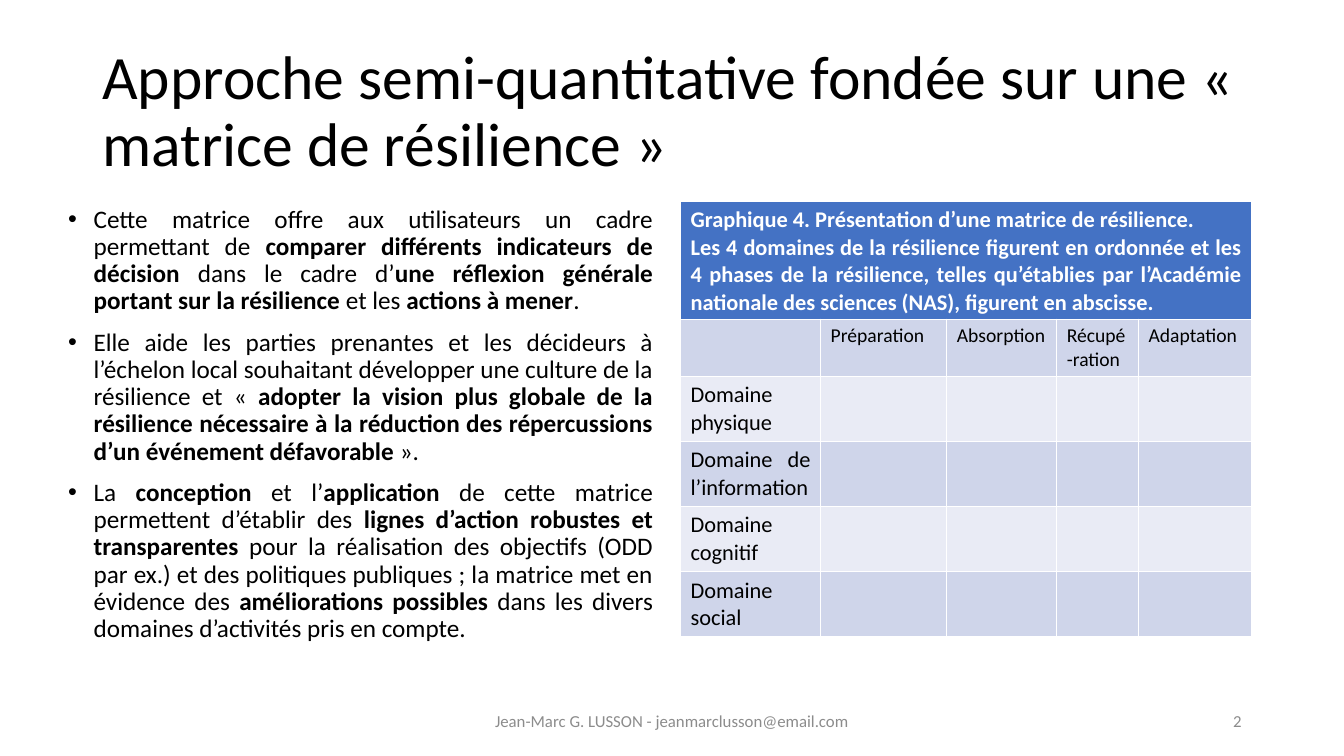
from lxml import etree
from pptx import Presentation
from pptx.dml.color import RGBColor
from pptx.enum.text import MSO_ANCHOR, PP_ALIGN
from pptx.oxml.ns import qn
from pptx.util import Cm, Pt

LEFT, RIGHT = PP_ALIGN.LEFT, PP_ALIGN.RIGHT
CENTER, JUSTIFY = PP_ALIGN.CENTER, PP_ALIGN.JUSTIFY
TOP, MIDDLE = MSO_ANCHOR.TOP, MSO_ANCHOR.MIDDLE

BLACK = RGBColor(0x00, 0x00, 0x00)
WHITE = RGBColor(0xFF, 0xFF, 0xFF)
GREY = RGBColor(0x8C, 0x8C, 0x8C)
BLUE = RGBColor(0x44, 0x72, 0xC4)
BANDS = (RGBColor(0xCF, 0xD5, 0xEA), RGBColor(0xE9, 0xEB, 0xF5))

TITLE = "Approche semi-quantitative fondée sur une « matrice de résilience »"
# Asterisks enclose bold passages.
POINTS = [
    "Cette matrice offre aux utilisateurs un cadre permettant de *comparer "
    "différents indicateurs de décision* dans le cadre d’*une réflexion "
    "générale portant sur la résilience* et les *actions à mener*.",
    "Elle aide les parties prenantes et les décideurs à l’échelon local "
    "souhaitant développer une culture de la résilience et « *adopter la "
    "vision plus globale de la résilience nécessaire à la réduction des "
    "répercussions d’un événement défavorable *». ",
    "La *conception* et l’*application* de cette matrice permettent d’établir "
    "des *lignes d’action robustes et transparentes* pour la réalisation des "
    "objectifs (ODD par ex.) et des politiques publiques ; la matrice met en "
    "évidence des *améliorations possibles* dans les divers domaines "
    "d’activités pris en compte.",
]
CAPTION = (
    "Graphique 4. Présentation d’une matrice de résilience. \n"
    "Les 4 domaines de la résilience figurent en ordonnée et les 4 phases de "
    "la résilience, telles qu’établies par l’Académie nationale des sciences "
    "(NAS), figurent en abscisse."
)
PHASES = ["Préparation", "Absorption", "Récupé-ration", "Adaptation"]
FIELDS = ["Domaine physique", "Domaine de l’information",
          "Domaine cognitif", "Domaine social"]
WIDTHS = [3.53, 3.18, 2.77, 2.06, 2.86]
HEIGHTS = [2.95, 1.42] + [1.64] * len(FIELDS)


class Deck:
    font = "Calibri"

    def __init__(self):
        self.prs = Presentation()
        self.prs.slide_width, self.prs.slide_height = Cm(33.87), Cm(19.05)
        self.slide = self.prs.slides.add_slide(self.prs.slide_layouts[6])

    def style(self, frame, size, color, align, bold=False):
        """Format every paragraph and run of a text frame."""
        for para in frame.paragraphs:
            para.alignment = align
            for run in para.runs:
                run.font.name = self.font
                run.font.size = Pt(size)
                run.font.color.rgb = color
                run.font.bold = bold

    def frame(self, box, anchor):
        """Add an empty wrapped text box and return its text frame."""
        shape = self.slide.shapes.add_textbox(*map(Cm, box))
        shape.text_frame.word_wrap = True
        shape.text_frame.vertical_anchor = anchor
        return shape.text_frame

    def text(self, box, words, size, color, align, spacing=1.0):
        frame = self.frame(box, MIDDLE)
        frame.text = words
        frame.paragraphs[0].line_spacing = spacing
        self.style(frame, size, color, align)

    def bullets(self, box, points, size):
        frame = self.frame(box, TOP)
        frame.text = "\n".join(p.replace("*", "") for p in points)
        for para, point in zip(frame.paragraphs, points):
            para.clear()
            for part in point.split("*"):
                para.add_run().text = part
            para.line_spacing = 0.9
            para.space_before = Pt(10)
            props = para._p.get_or_add_pPr()
            props.set("marL", str(Cm(0.64)))
            props.set("indent", str(-Cm(0.64)))
            etree.SubElement(props, qn("a:buFont")).set("typeface", "Arial")
            etree.SubElement(props, qn("a:buChar")).set("char", "•")
        self.style(frame, size, BLACK, JUSTIFY)
        for para in frame.paragraphs:
            for run in para.runs[1::2]:
                run.font.bold = True

    def cell(self, cell, words, size, fill, color=BLACK, bold=False):
        cell.fill.solid()
        cell.fill.fore_color.rgb = fill
        cell.text = words
        self.style(cell.text_frame, size, color, JUSTIFY, bold)

    def matrix(self, left, top):
        shape = self.slide.shapes.add_table(
            len(HEIGHTS), len(WIDTHS), Cm(left), Cm(top),
            Cm(sum(WIDTHS)), Cm(sum(HEIGHTS)))
        table = shape.table
        for col, width in zip(table.columns, WIDTHS):
            col.width = Cm(width)
        for row, height in zip(table.rows, HEIGHTS):
            row.height = Cm(height)
        head = table.cell(0, 0)
        head.merge(table.cell(0, len(WIDTHS) - 1))
        self.cell(head, CAPTION, 16, BLUE, WHITE, True)
        blank = [""] * len(PHASES)
        body = [["", *PHASES]] + [[field, *blank] for field in FIELDS]
        for r, row in enumerate(body):
            for c, words in enumerate(row):
                self.cell(table.cell(r + 1, c), words,
                          16 if r else 14, BANDS[r % 2])


def main():
    deck = Deck()
    deck.text((2.33, 1.01, 29.21, 3.68), TITLE, 44, BLACK, LEFT, 0.9)
    deck.bullets((1.47, 5.08, 15.24, 12.09), POINTS, 18)
    deck.matrix(17.15, 5.08)
    deck.text((11.22, 17.66, 11.43, 1.01),
              "Jean-Marc G. LUSSON - jeanmarclusson@email.com",
              12, GREY, CENTER)
    deck.text((23.92, 17.66, 7.62, 1.01), "2", 12, GREY, RIGHT)
    deck.prs.save("out.pptx")


if __name__ == "__main__":
    main()
